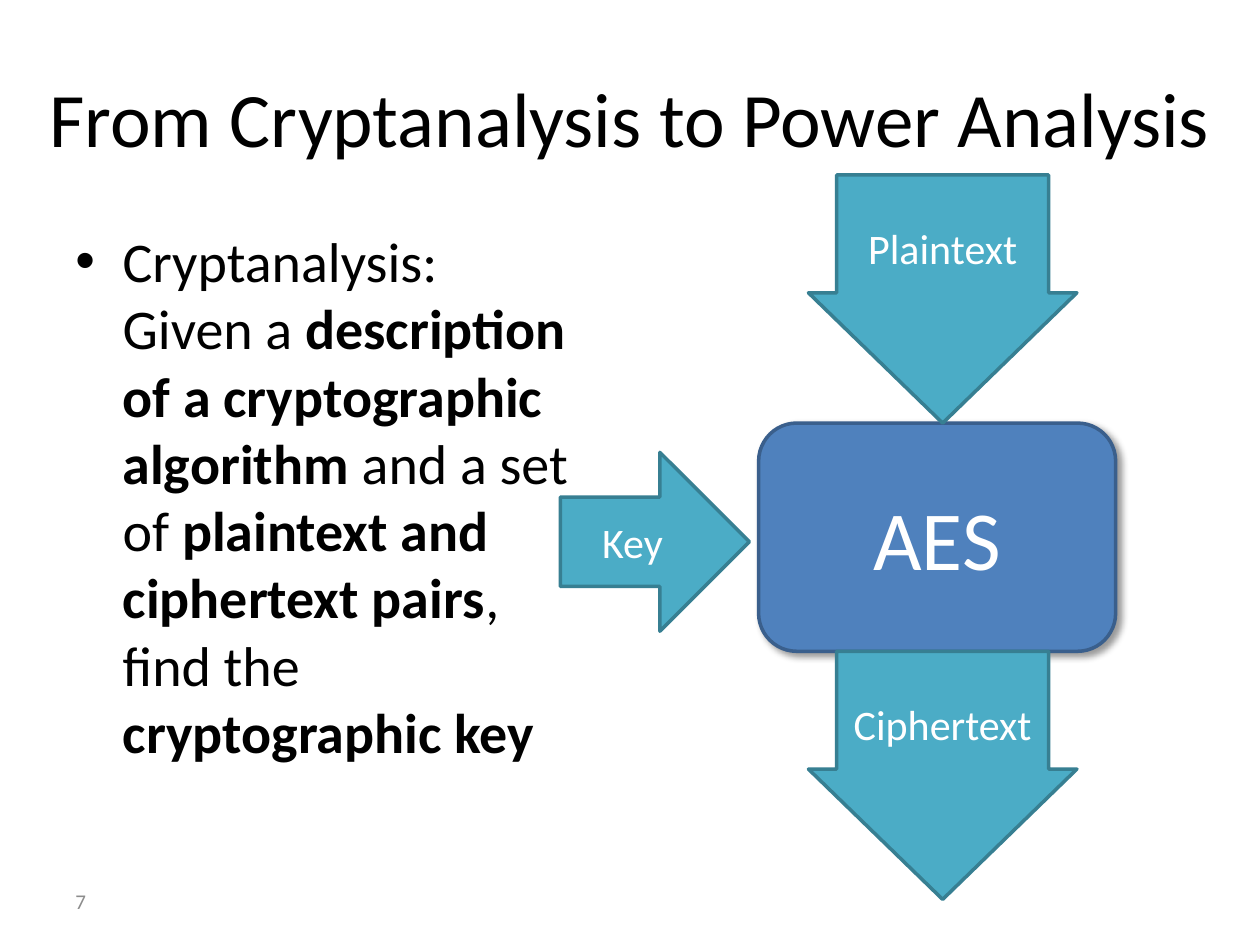
from lxml import etree
from pptx import Presentation
from pptx.dml.color import RGBColor
from pptx.enum import shapes, text
from pptx.oxml import parse_xml
from pptx.oxml.ns import qn
from pptx.util import Pt

BLACK = RGBColor(0, 0, 0)
WHITE = RGBColor(255, 255, 255)
GREY = RGBColor(0x8C, 0x8C, 0x8C)
BLUE = RGBColor(0x4F, 0x81, 0xBD)
NAVY = RGBColor(0x3A, 0x5F, 0x8C)
TEAL = RGBColor(0x4B, 0xAC, 0xC6)
PINE = RGBColor(0x37, 0x7F, 0x92)
MID, TOP = text.MSO_ANCHOR.MIDDLE, text.MSO_ANCHOR.TOP
CENTER, LEFT = text.PP_ALIGN.CENTER, text.PP_ALIGN.LEFT
KINDS = shapes.MSO_SHAPE
SHADOW = """<a:effectLst xmlns:a="http://schemas.openxmlformats.org/drawingml/2006/main">
  <a:outerShdw blurRad="50800" dist="38100" dir="2700000" algn="tl" rotWithShape="0">
    <a:srgbClr val="000000"><a:alpha val="40000"/></a:srgbClr>
  </a:outerShdw></a:effectLst>"""


def write(shape, *parts, size, color=BLACK, align=LEFT, anchor=MID, bullet=None):
    """Fill one paragraph; every second part is bold."""
    frame = shape.text_frame
    frame.word_wrap = True
    frame.vertical_anchor = anchor
    para = frame.paragraphs[0]
    para.alignment = align
    if bullet:
        props = para._p.get_or_add_pPr()
        props.set("marL", str(Pt(27)))
        props.set("indent", str(-Pt(27)))
        etree.SubElement(props, qn("a:buFont")).set("typeface", "Arial")
        etree.SubElement(props, qn("a:buChar")).set("char", bullet)
    para.font.size = Pt(size)
    for i, part in enumerate(parts):
        for j, line in enumerate(part.split("\n")):
            if j:
                para.add_line_break()
            run = para.add_run()
            run.text = line
            font = run.font
            font.name, font.size, font.bold = "Calibri", Pt(size), i % 2 == 1
            font.color.rgb = color


def label(slide, box, *parts, **style):
    write(slide.shapes.add_textbox(*map(Pt, box)), *parts, **style)


def block(slide, kind, box, words, size=24, fill=TEAL, edge=PINE, adjust=()):
    shape = slide.shapes.add_shape(kind, *map(Pt, box))
    shape.shadow.inherit = False
    for i, value in enumerate(adjust):
        shape.adjustments[i] = value
    shape.fill.solid()
    shape.fill.fore_color.rgb = fill
    shape.line.color.rgb = edge
    shape.line.width = Pt(2)
    write(shape, words, size=size, color=WHITE, align=CENTER)
    return shape


def shade(shape):
    props = shape._element.spPr
    props.replace(props.find(qn("a:effectLst")), parse_xml(SHADOW))


def main():
    deck = Presentation()
    deck.slide_width, deck.slide_height = Pt(720), Pt(540)
    slide = deck.slides.add_slide(deck.slide_layouts[6])

    label(slide, (0, 21.6, 720, 90), "From Cryptanalysis to Power Analysis",
          size=44, align=CENTER)
    label(slide, (36, 126, 312.5, 356.4),
          "Cryptanalysis:\nGiven a ", "description of a cryptographic algorithm",
          " and a set of ", "plaintext and ciphertext pairs",
          ", find the ", "cryptographic key",
          size=32, anchor=TOP, bullet="•")
    label(slide, (36, 500.4, 168, 28.8), "7", size=12, color=GREY)

    top, height, flow = 241.8, 130.4, 141.8
    shade(block(slide, KINDS.ROUNDED_RECTANGLE, (433.5, top, 204, height),
                "AES", size=48, fill=BLUE, edge=NAVY))
    for y, words in ((top - flow, "Plaintext"), (top + height, "Ciphertext")):
        block(slide, KINDS.DOWN_ARROW, (462, y, 153.4, flow), words,
              adjust=(0.79, 0.525))
    block(slide, KINDS.RIGHT_ARROW, (320.2, 258.5, 108, 102.2), "Key")

    deck.save("out.pptx")


if __name__ == "__main__":
    main()
